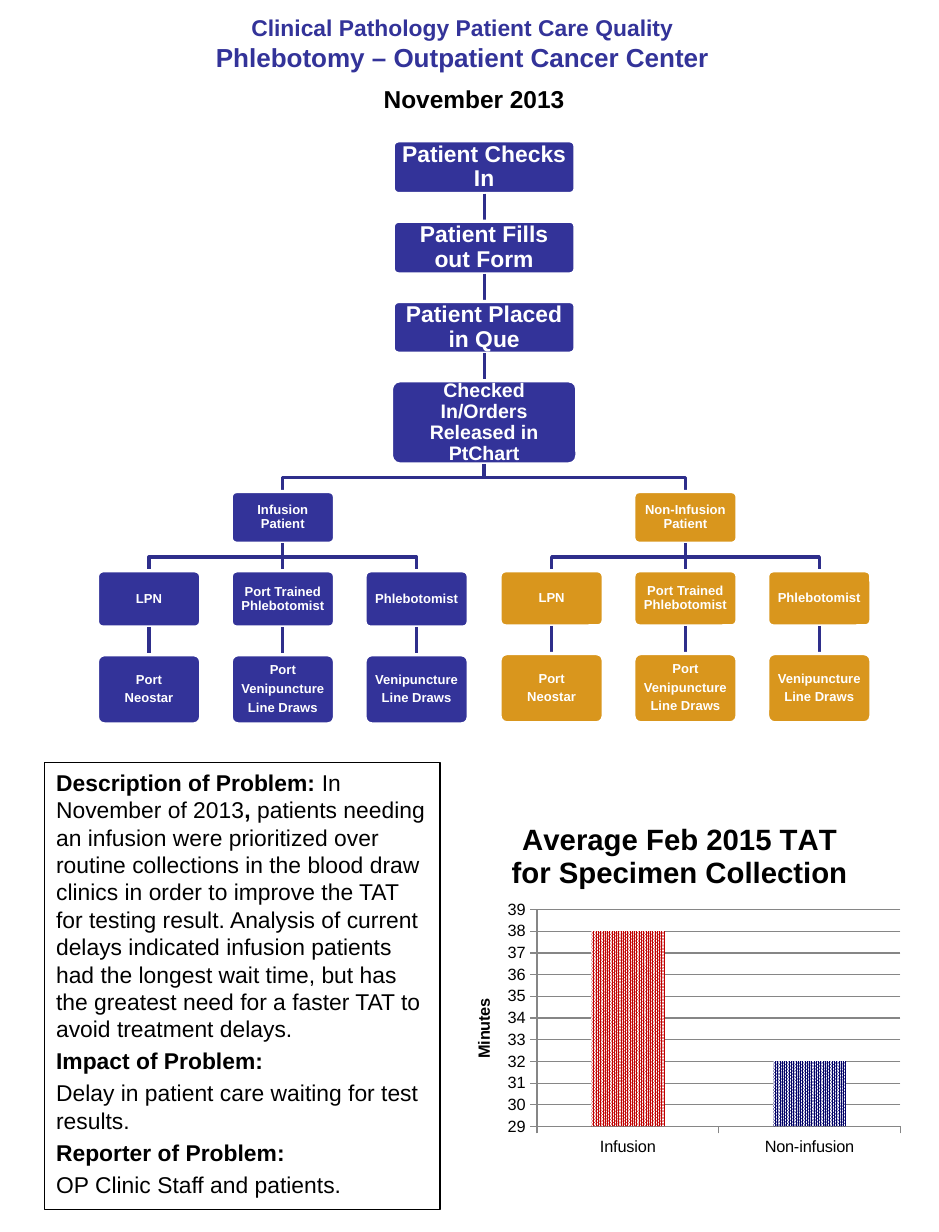
from dataclasses import dataclass

import lxml.etree
import pptx
import pptx.chart.data
import pptx.dml.color
import pptx.enum.chart
import pptx.enum.dml
import pptx.enum.shapes
import pptx.enum.text
import pptx.oxml
import pptx.oxml.ns
import pptx.util

Inches = pptx.util.Inches
Pt = pptx.util.Pt
ALIGN = pptx.enum.text.PP_ALIGN
ANCHOR = pptx.enum.text.MSO_ANCHOR


def rgb(value):
    return pptx.dml.color.RGBColor.from_string(value)


@dataclass(frozen=True)
class Theme:
    font: str = "Arial"
    navy: str = "333399"
    link: str = "2E2E8B"
    gold: str = "D9961D"
    white: str = "FFFFFF"
    black: str = "000000"
    grid: str = "868686"
    red_bar: str = "C00000"
    blue_bar: str = "000066"
    subtitle: float = 14
    title: float = 16
    date: float = 15
    body: float = 14
    step: float = 14
    release: float = 12
    node: float = 8
    chart: float = 10
    chart_title: float = 18


THEME = Theme()

STEPS = [  # text, width, height, type size, margin
    ("Patient Checks In", 1.55, 0.45, THEME.step, 0.06),
    ("Patient Fills out Form", 1.55, 0.45, THEME.step, 0.06),
    ("Patient Placed in Que", 1.55, 0.44, THEME.step, 0.06),
    ("Checked In/Orders Released in PtChart", 1.58, 0.71, THEME.release, 0.05),
]
ROLES = [
    ("LPN", ["Port", "Neostar"]),
    ("Port Trained Phlebotomist", ["Port", "Venipuncture", "Line Draws"]),
    ("Phlebotomist", ["Venipuncture", "Line Draws"]),
]
BRANCHES = [  # text, centre from the left of the flow, fill, role height
    ("Infusion Patient", 1.58, THEME.navy, 0.48),
    ("Non-Infusion Patient", 5.01, THEME.gold, 0.47),
]
PROBLEM = [  # paragraphs of (text, bold)
    [("Description of Problem: ", True), ("In November of 2013", False), (",", True),
     (" patients needing an infusion were prioritized over routine collections in the "
      "blood draw clinics in order to improve the TAT for testing result. Analysis of "
      "current delays indicated infusion patients had the longest wait time, but has "
      "the greatest need for a faster TAT to avoid treatment delays.", False)],
    [("Impact of Problem:", True)],
    [("Delay in patient care waiting for test results.", False)],
    [("Reporter of Problem:", True)],
    [("OP Clinic Staff and patients.", False)],
]


def style(font, size, color=THEME.black, bold=True):
    font.name, font.size, font.bold = THEME.font, Pt(size), bold
    font.color.rgb = rgb(color)


def add_text(slide, left, top, width, height):
    box = slide.shapes.add_textbox(Inches(left), Inches(top), Inches(width), Inches(height))
    box.text_frame.word_wrap = True
    return box


def add_heading(slide, left, top, width, height):
    frame = add_text(slide, left, top, width, height).text_frame
    frame.vertical_anchor = ANCHOR.MIDDLE
    para = frame.paragraphs[0]
    para.text = "Clinical Pathology Patient Care Quality\vPhlebotomy – Outpatient Cancer Center"
    para.alignment = ALIGN.CENTER
    for span, size in zip(para.runs, (THEME.subtitle, THEME.title)):
        style(span.font, size, THEME.navy)


def add_date(slide, left, top, width, height):
    para = add_text(slide, left, top, width, height).text_frame.paragraphs[0]
    para.text = "November 2013"
    style(para.runs[0].font, THEME.date)


def add_node(slide, center, top, width, height, lines, fill, size=THEME.node, margin=0.03):
    box = slide.shapes.add_shape(
        pptx.enum.shapes.MSO_SHAPE.ROUNDED_RECTANGLE,
        Inches(center - width / 2), Inches(top), Inches(width), Inches(height))
    box.adjustments[0] = 0.1
    box.shadow.inherit = False
    box.fill.solid()
    box.fill.fore_color.rgb = rgb(fill)
    box.line.color.rgb = rgb(THEME.white)
    box.line.width = Pt(2)
    frame = box.text_frame
    frame.word_wrap = True
    frame.vertical_anchor = ANCHOR.MIDDLE
    frame.margin_left = frame.margin_right = Inches(margin)
    frame.margin_top = frame.margin_bottom = Inches(margin)
    frame.text = "\n".join(lines)
    for para in frame.paragraphs:
        para.alignment = ALIGN.CENTER
        para.line_spacing = 0.9
        para.space_after = Pt(size * 0.35)
        style(para.runs[0].font, size, THEME.white)


def add_link(slide, x1, y1, x2, y2):
    """Join two nodes, with a bend halfway down when they are not in line."""
    if x1 == x2:
        line = slide.shapes.add_connector(
            pptx.enum.shapes.MSO_CONNECTOR.STRAIGHT,
            Inches(x1), Inches(y1), Inches(x2), Inches(y2))
        lxml.etree.SubElement(line._element.spPr, pptx.oxml.ns.qn("a:effectLst"))
    else:
        middle = (y1 + y2) / 2
        outline = slide.shapes.build_freeform(Inches(x1), Inches(y1))
        outline.add_line_segments(
            [(Inches(x), Inches(y)) for x, y in ((x1, middle), (x2, middle), (x2, y2))],
            close=False)
        line = outline.convert_to_shape()
        line.fill.background()
        line.shadow.inherit = False
    line.line.color.rgb = rgb(THEME.link)
    line.line.width = Pt(2)


def add_branch(slide, center, top, text, fill, role_height):
    """Place a patient type, its three roles and what each role draws."""
    width, height, gap, pitch = 0.88, 0.44, 0.235, 1.14
    bottom = top + height
    role_top = bottom + gap
    role_bottom = role_top + role_height
    add_node(slide, center, top, width, height, [text], fill)
    for index, (role, draws) in enumerate(ROLES):
        x = center + (index - 1) * pitch
        add_link(slide, center, bottom, x, role_top)
        add_node(slide, x, role_top, width, role_height, [role], fill)
        add_link(slide, x, role_bottom, x, role_bottom + gap)
        add_node(slide, x, role_bottom + gap, width, 0.59, draws, fill)


def add_flow(slide, left, top, width):
    center, gap = left + width / 2, 0.235
    for index, (text, step_width, height, size, margin) in enumerate(STEPS):
        if index:
            add_link(slide, center, top - gap, center, top)
        add_node(slide, center, top, step_width, height, [text], THEME.navy, size, margin)
        top += height + gap
    for text, offset, fill, role_height in BRANCHES:
        add_link(slide, center, top - gap, left + offset, top)
        add_branch(slide, left + offset, top, text, fill, role_height)


def add_problem(slide, left, top, width, height):
    box = add_text(slide, left, top, width, height)
    box.line.color.rgb = rgb(THEME.black)
    box.line.width = Pt(0.75)
    frame = box.text_frame
    for index, spans in enumerate(PROBLEM):
        para = frame.add_paragraph() if index else frame.paragraphs[0]
        para.space_before = Pt(THEME.body * 0.2)
        for text, bold in spans:
            span = para.add_run()
            span.text = text
            style(span.font, THEME.body, bold=bold)


def place_plot(chart, x, y, w, h):
    """Fix the inner plot area, in fractions of the chart."""
    parts = "".join(f'<c:{key} val="{value}"/>' for key, value in zip("xywh", (x, y, w, h)))
    layout = pptx.oxml.parse_xml(
        f'<c:layout {pptx.oxml.ns.nsdecls("c")}><c:manualLayout><c:layoutTarget val="inner"/>'
        f'<c:xMode val="edge"/><c:yMode val="edge"/>{parts}</c:manualLayout></c:layout>')
    area = chart._chartSpace.chart.plotArea
    for old in area.findall(pptx.oxml.ns.qn("c:layout")):
        area.remove(old)
    area.insert(0, layout)


def add_title(owner, text, size):
    para = owner.text_frame.paragraphs[0]
    para.text = text
    style(para.runs[0].font, size)


def add_tat_chart(slide, left, top, width, height):
    data = pptx.chart.data.CategoryChartData()
    data.categories = ["Infusion", "Non-infusion"]
    data.add_series("Series 1", (38, 32))
    chart = slide.shapes.add_chart(
        pptx.enum.chart.XL_CHART_TYPE.COLUMN_CLUSTERED,
        Inches(left), Inches(top), Inches(width), Inches(height), data).chart
    style(chart.font, THEME.chart, bold=False)
    chart.has_legend = False
    add_title(chart.chart_title, "Average Feb 2015 TAT for Specimen Collection", THEME.chart_title)
    values = chart.value_axis
    add_title(values.axis_title, "Minutes", THEME.chart)
    values.minimum_scale, values.maximum_scale, values.major_unit = 29, 39, 1
    for line in (values.major_gridlines.format.line, values.format.line,
                 chart.category_axis.format.line):
        line.color.rgb = rgb(THEME.grid)
        line.width = Pt(0.75)
    for axis in (values, chart.category_axis):
        axis.major_tick_mark = pptx.enum.chart.XL_TICK_MARK.OUTSIDE
    plot = chart.plots[0]
    plot.gap_width = 150
    plot.vary_by_categories = False
    for index, color in enumerate((THEME.red_bar, THEME.blue_bar)):
        fill = plot.series[0].points[index].format.fill
        fill.patterned()
        fill.pattern = pptx.enum.dml.MSO_PATTERN.PERCENT_90
        fill.fore_color.rgb = rgb(color)
        fill.back_color.rgb = rgb(THEME.white)
    place_plot(chart, 0.19, 0.3, 0.79, 0.6)


def main():
    deck = pptx.Presentation()
    deck.slide_width, deck.slide_height = Inches(8), Inches(10.5)
    page = deck.slides.add_slide(deck.slide_layouts[6])
    add_heading(page, 0.34, 0.08, 7.2, 0.58)
    add_problem(page, 0.38, 6.5, 3.37, 3.81)
    add_flow(page, 0.83, 1.2, 6.59)
    add_date(page, 3.17, 0.67, 1.92, 0.35)
    add_tat_chart(page, 3.83, 6.83, 3.92, 3.08)
    deck.save("out.pptx")


if __name__ == "__main__":
    main()
